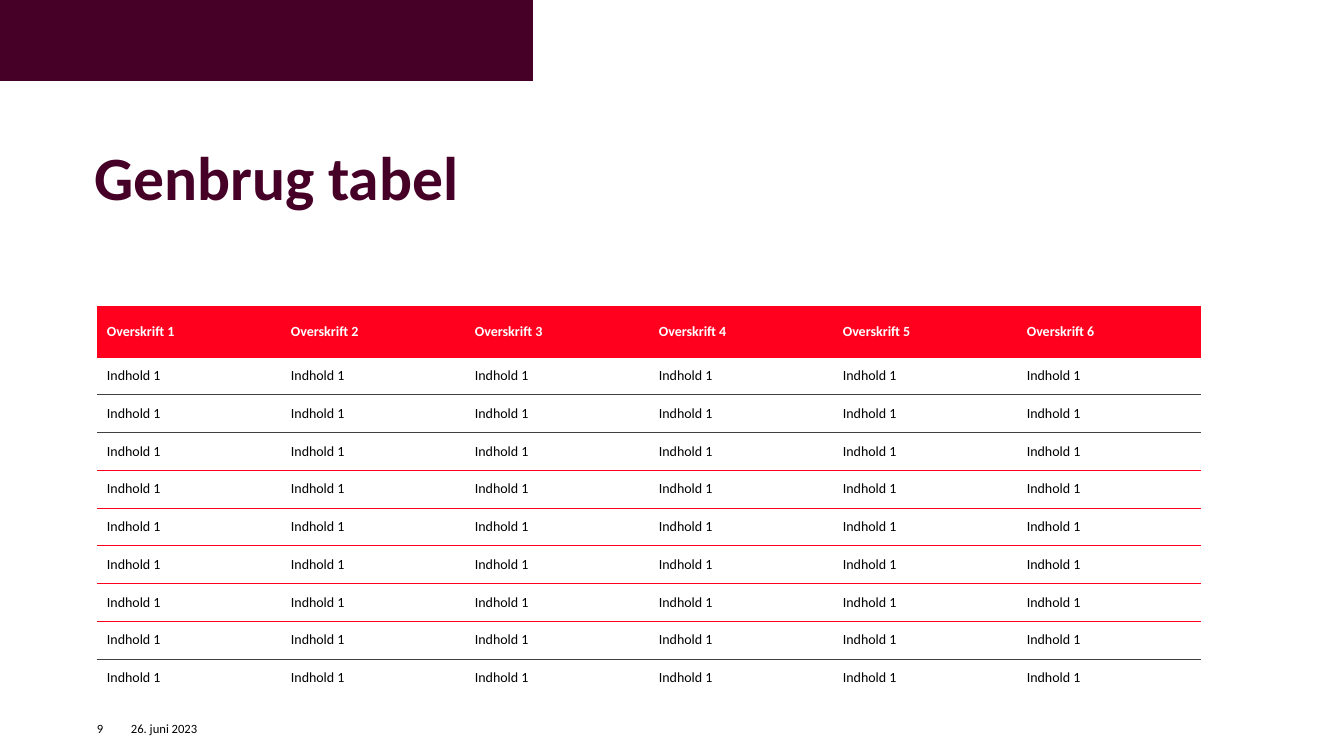
from lxml import etree
from pptx import Presentation, util as u
from pptx.dml.color import RGBColor
from pptx.enum import shapes, text
from pptx.oxml.ns import qn

COLORS = {"plum": "460028", "red": "FF001E", "black": "000000", "grey": "404040", "white": "FFFFFF"}
PLAIN_TABLE = "{2D5ABB26-0587-4C30-8999-92F81FD0307C}"
EMU_PER_PX = 914400 / 100.8


def px(length):
    return u.Emu(round(length * EMU_PER_PX))


class TableSlide:
    font = "Calibri"

    def __init__(self, deck):
        self.slide = deck.slides.add_slide(deck.slide_layouts[5])

    def add_words(self, frame, words, size, color, bold=False):
        paragraph = frame.paragraphs[0]
        paragraph.alignment = text.PP_ALIGN.LEFT
        run = paragraph.add_run()
        run.text = words
        run.font.name = self.font
        run.font.size = u.Pt(size)
        run.font.bold = bold
        run.font.color.rgb = RGBColor.from_string(COLORS[color])
        return paragraph

    def frame(self, holder):
        frame = holder.text_frame
        frame.margin_left = frame.margin_right = frame.margin_top = frame.margin_bottom = 0
        frame.word_wrap = True
        frame.auto_size = text.MSO_AUTO_SIZE.NONE
        frame.vertical_anchor = text.MSO_ANCHOR.TOP
        return frame

    def title(self, words, left, top, width, height):
        heading = self.slide.shapes.title
        heading.left, heading.top = px(left), px(top)
        heading.width, heading.height = px(width), px(height)
        self.add_words(self.frame(heading), words, 44, "plum", True).line_spacing = 0.83

    def band(self, left, top, width, height):
        band = self.slide.shapes.add_shape(
            shapes.MSO_SHAPE.RECTANGLE, px(left), px(top), px(width), px(height))
        band.shadow.inherit = False
        band.fill.solid()
        band.fill.fore_color.rgb = RGBColor.from_string(COLORS["plum"])
        band.line.fill.background()

    def footer(self, words, left, top, width, height):
        footer = self.slide.shapes.add_textbox(px(left), px(top), px(width), px(height))
        self.add_words(self.frame(footer), words, 9, "black")

    def borders(self, cell, above, below):
        properties = cell._tc.get_or_add_tcPr()
        for side, rule in (("L", None), ("R", None), ("T", above), ("B", below)):
            line = etree.SubElement(properties, qn(f"a:ln{side}"))
            if rule is None:
                etree.SubElement(line, qn("a:noFill"))
                continue
            color, points = rule
            line.set("w", str(u.Pt(points)))
            fill = etree.SubElement(line, qn("a:solidFill"))
            etree.SubElement(fill, qn("a:srgbClr")).set("val", COLORS[color])

    def table(self, rows, rules, left, top, width, header_height, body_height):
        table = self.slide.shapes.add_table(
            len(rows), len(rows[0]), px(left), px(top), px(width),
            px(header_height + body_height)).table
        table._tbl.tblPr.find(qn("a:tableStyleId")).text = PLAIN_TABLE
        table.horz_banding = False
        for column in table.columns:
            column.width = px(width / len(rows[0]))
        for index, row in enumerate(rows):
            header = index == 0
            table.rows[index].height = px(
                header_height if header else body_height / (len(rows) - 1))
            for column, words in enumerate(row):
                cell = table.cell(index, column)
                self.borders(cell, rules[index], rules[index + 1])
                cell.fill.solid()
                cell.fill.fore_color.rgb = RGBColor.from_string(
                    COLORS["red" if header else "white"])
                cell.margin_left = cell.margin_right = px(10)
                cell.margin_top = cell.margin_bottom = 0
                cell.vertical_anchor = text.MSO_ANCHOR.MIDDLE
                self.add_words(cell.text_frame, words, 10, "white" if header else "black", header)


def main():
    deck = Presentation()
    deck.slide_width, deck.slide_height = px(1344), px(756)
    page = TableSlide(deck)
    page.band(0, 0, 533, 81)
    page.title("Genbrug tabel", 94, 151, 1008, 138)
    page.footer("26. juni 2023", 131, 721, 137, 20)
    page.footer("9", 97, 721, 28, 20)

    headings = [f"Overskrift {number}" for number in range(1, 7)]
    contents = [["Indhold 1"] * len(headings)] * 9
    thick, thin, dark = ("red", 1), ("red", 0.5), ("grey", 0.5)
    rules = [thick, thick, dark, dark, thick, thin, thin, thin, thick, dark, None]
    page.table([headings] + contents, rules, 97, 307, 1104, 50, 340)
    deck.save("out.pptx")


if __name__ == "__main__":
    main()
